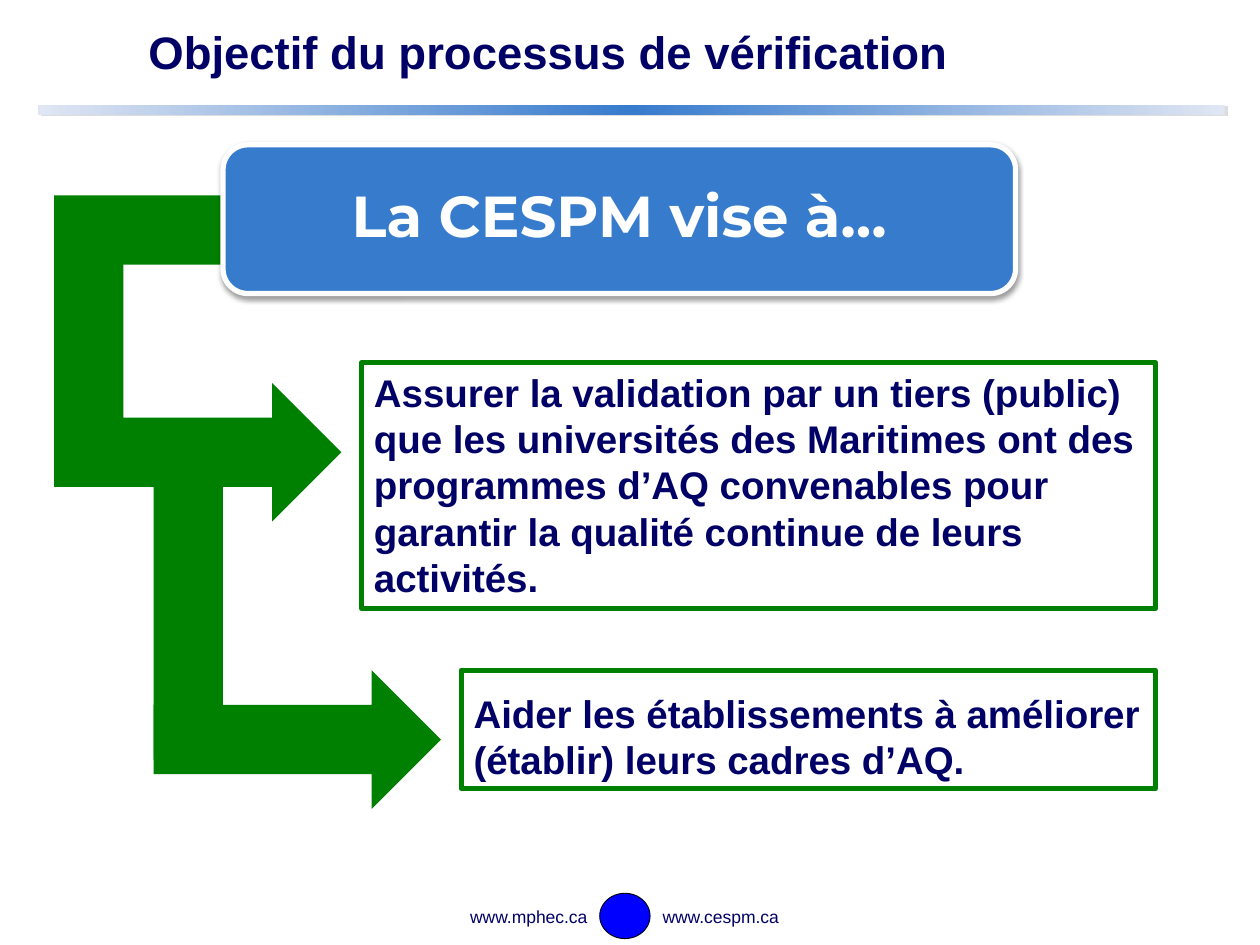
from typing import NamedTuple, Optional

from lxml.etree import SubElement
from pptx import Presentation
from pptx.dml.color import RGBColor
from pptx.enum.shapes import MSO_SHAPE as Preset
from pptx.enum.text import MSO_ANCHOR as Anchor, PP_ALIGN as Align
from pptx.oxml.ns import qn
from pptx.util import Inches, Pt

COLORS = {
    "navy": "000066", "green": "008000", "blue": "377BCD", "pale": "E0E6F3",
    "white": "FFFFFF", "emblem": "0000FF", "black": "000000", "grey": "DDDDDD",
}
SLIDE_W, SLIDE_H = Inches(10), Inches(7.5)


class Area(NamedTuple):
    """Left, top, width and height in percent of the slide's size."""
    left: float
    top: float
    width: float
    height: float

    def emu(self) -> list[int]:
        sides = (SLIDE_W, SLIDE_H, SLIDE_W, SLIDE_H)
        return [round(side * share / 100) for side, share in zip(sides, self)]


class Shadow(NamedTuple):
    color: str
    alpha: int
    blur: float
    distance: float
    angle: int


class Label(NamedTuple):
    text: str
    size: float
    color: str = "navy"
    font: str = "Arial"
    bold: bool = True
    align: Align = Align.LEFT
    anchor: Anchor = Anchor.TOP
    line_spacing: float = 1.0
    margin_top: float = 0.05


class Panel(NamedTuple):
    area: Area
    preset: Preset = Preset.RECTANGLE
    fill: Optional[str] = None
    line: Optional[str] = None
    line_width: float = 3
    shadow: Optional[Shadow] = None
    label: Optional[Label] = None


class Branch(NamedTuple):
    """A vertical stem that turns right into an arrow."""
    left: float
    stem_top: float
    stem_height: float
    arrow_top: float


BAR_W, BAR_H = 5.5, 7.33
ARROW_W, ARROW_H = 22.8, 2 * BAR_H

RULE = Panel(Area(3, 11.07, 94.2, 1.07), fill="blue", shadow=Shadow("grey", 100, 0, 2.2, 27))
TITLE = Panel(Area(10.8, 0.4, 86.3, 10.8), label=Label(
    "Objectif du processus de vérification", 26, anchor=Anchor.MIDDLE, line_spacing=0.9))
BRANCH_START = Panel(Area(4.3, 20.67, 14.2, BAR_H), fill="green")
BRANCHES = [Branch(4.3, 23.2, 27.87, 40.53), Branch(12.2, 48.4, 32, 70.93)]

PANELS = [
    Panel(Area(17.7, 15.33, 62.9, 15.73), Preset.ROUNDED_RECTANGLE, "blue", "white",
          shadow=Shadow("black", 38, 3.1, 1.6, 90),
          label=Label("La CESPM vise à…", 33, "white", "Montserrat", align=Align.CENTER,
                      anchor=Anchor.MIDDLE, line_spacing=0.9)),
    Panel(Area(28.7, 38.4, 63, 26), line="green", label=Label(
        "Assurer la validation par un tiers (public) que les universités des Maritimes "
        "ont des programmes d’AQ convenables pour garantir la qualité continue de leurs "
        "activités.", 22)),
    Panel(Area(36.6, 70.93, 55.1, 12.53), line="green", label=Label(
        "Aider les établissements à améliorer (établir) leurs cadres d’AQ.", 22,
        anchor=Anchor.MIDDLE, margin_top=0.15)),
    Panel(Area(29.5, 95.2, 18.1, 3.6),
          label=Label("www.mphec.ca", 10, bold=False, align=Align.RIGHT)),
    Panel(Area(51.6, 95.2, 12.5, 3.6), label=Label("www.cespm.ca", 10, bold=False)),
    Panel(Area(47.6, 94.53, 4, 4.8), Preset.OVAL, "emblem", "black", 0.5),
]


def rgb(name: str) -> RGBColor:
    return RGBColor.from_string(COLORS[name])


def add_shadow(shape, shadow: Shadow) -> None:
    effects = shape._element.spPr.find(qn("a:effectLst"))
    outer = SubElement(effects, qn("a:outerShdw"), blurRad=str(Pt(shadow.blur)),
                       dist=str(Pt(shadow.distance)), dir=str(shadow.angle * 60000),
                       algn="ctr", rotWithShape="0")
    color = SubElement(outer, qn("a:srgbClr"), val=COLORS[shadow.color])
    SubElement(color, qn("a:alpha"), val=str(shadow.alpha * 1000))


def write_label(shape, label: Label) -> None:
    frame = shape.text_frame
    layout = {"word_wrap": True, "vertical_anchor": label.anchor,
              "margin_left": Inches(0.1), "margin_right": Inches(0.1),
              "margin_top": Inches(label.margin_top), "margin_bottom": Inches(0.05)}
    for name, value in layout.items():
        setattr(frame, name, value)
    paragraph = frame.paragraphs[0]
    paragraph.alignment = label.align
    paragraph.line_spacing = label.line_spacing
    run = paragraph.add_run()
    run.text = label.text
    for name, value in {"name": label.font, "size": Pt(label.size), "bold": label.bold}.items():
        setattr(run.font, name, value)
    run.font.color.rgb = rgb(label.color)


def draw_panel(slide, panel: Panel):
    if panel.fill or panel.line:
        shape = slide.shapes.add_shape(panel.preset, *panel.area.emu())
        shape.shadow.inherit = False
    else:
        shape = slide.shapes.add_textbox(*panel.area.emu())
    if panel.fill:
        shape.fill.solid()
        shape.fill.fore_color.rgb = rgb(panel.fill)
    else:
        shape.fill.background()
    if panel.line:
        shape.line.color.rgb = rgb(panel.line)
        shape.line.width = Pt(panel.line_width)
    else:
        shape.line.fill.background()
    if panel.shadow:
        add_shadow(shape, panel.shadow)
    if panel.label:
        write_label(shape, panel.label)
    return shape


def fade_to_ends(shape, middle: str, ends: str) -> None:
    """Fill the shape from left to right with a gradient of three stops."""
    shape.fill.gradient()
    shape.fill.gradient_angle = 0
    stops = shape._element.spPr.find(qn("a:gradFill")).find(qn("a:gsLst"))
    for stop in list(stops):
        stops.remove(stop)
    for position, color in ((0, ends), (50, middle), (100, ends)):
        stop = SubElement(stops, qn("a:gs"), pos=str(position * 1000))
        SubElement(stop, qn("a:srgbClr"), val=COLORS[color])


def draw_branch(slide, branch: Branch) -> None:
    stem = Area(branch.left, branch.stem_top, BAR_W, branch.stem_height)
    arrow = Area(branch.left, branch.arrow_top, ARROW_W, ARROW_H)
    draw_panel(slide, Panel(stem, fill="green"))
    draw_panel(slide, Panel(arrow, Preset.RIGHT_ARROW, "green"))


def main() -> None:
    deck = Presentation()
    deck.slide_width, deck.slide_height = SLIDE_W, SLIDE_H
    slide = deck.slides.add_slide(deck.slide_layouts[6])
    fade_to_ends(draw_panel(slide, RULE), "blue", "pale")
    draw_panel(slide, TITLE)
    draw_panel(slide, BRANCH_START)
    for branch in BRANCHES:
        draw_branch(slide, branch)
    for panel in PANELS:
        draw_panel(slide, panel)
    deck.save("out.pptx")


if __name__ == "__main__":
    main()
